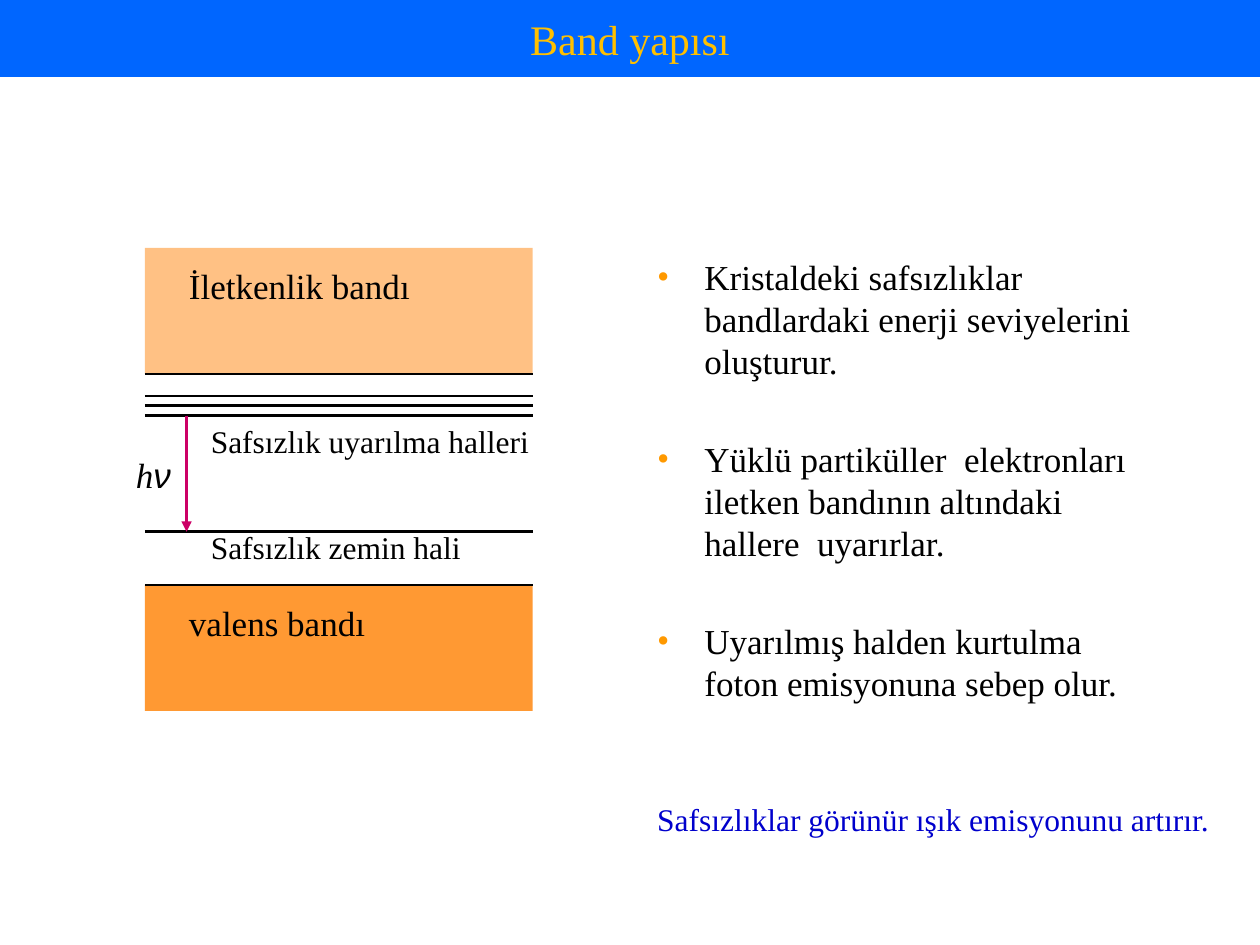
from dataclasses import dataclass

from lxml import etree
from pptx import Presentation
from pptx.dml.color import RGBColor
from pptx.enum.shapes import MSO_CONNECTOR, MSO_SHAPE
from pptx.enum.text import MSO_ANCHOR, PP_ALIGN
from pptx.oxml.ns import qn
from pptx.util import Cm, Pt

RECT = MSO_SHAPE.RECTANGLE
STRAIGHT = MSO_CONNECTOR.STRAIGHT
MIDDLE, TOP = MSO_ANCHOR.MIDDLE, MSO_ANCHOR.TOP
CENTER = PP_ALIGN.CENTER


@dataclass(frozen=True)
class Theme:
    font: str = "Times New Roman"
    symbol_font: str = "Arial"
    header: str = "0066FF"
    title: str = "FFC000"
    ink: str = "000000"
    band: str = "FF9933"
    bullet: str = "FF9900"
    photon: str = "CC0066"
    remark: str = "0000CC"
    title_size: int = 24
    body_size: int = 20
    label_size: int = 18
    line_width: float = 1.5


@dataclass(frozen=True)
class Band:
    top: float
    opacity: int


@dataclass(frozen=True)
class Label:
    text: str
    left: float
    top: float
    width: float
    size: int
    color: str
    wrap: bool = True


T = Theme()

# Band diagram, lengths in centimetres
LEFT, WIDTH, BAND_HEIGHT = 2.92, 7.82, 2.54
CONDUCTION, VALENCE = Band(5.0, 60), Band(11.79, 100)
EXCITED = [7.98, 8.18, 8.38]
GROUND = 10.72
LEVELS = [CONDUCTION.top + BAND_HEIGHT, *EXCITED, GROUND, VALENCE.top]
PHOTON_X = 3.76

LABELS = [
    Label("İletkenlik bandı", 3.56, 5.21, 6.15, T.body_size, T.ink),
    Label("valens bandı", 3.56, 12.0, 6.15, T.body_size, T.ink),
    Label("Safsızlık uyarılma halleri", 4.0, 8.38, 7.19, T.label_size, T.ink),
    Label("Safsızlık zemin hali", 4.0, 10.52, 6.15, T.label_size, T.ink),
    Label("Safsızlıklar görünür ışık emisyonunu artırır.", 13.0, 16.0, 11.73,
          T.label_size, T.remark, wrap=False),
]
POINTS = [
    "Kristaldeki safsızlıklar bandlardaki enerji seviyelerini oluşturur.",
    "Yüklü partiküller  elektronları iletken bandının altındaki hallere  uyarırlar.",
    "Uyarılmış halden kurtulma foton emisyonuna sebep olur.",
]


def set_all(target, values: dict) -> None:
    for name, value in values.items():
        setattr(target, name, value)


def add_run(p, text: str, size: int, color: str, font: str = T.font,
            italic: bool = False) -> None:
    r = p.add_run()
    r.text = text
    set_all(r.font, {"name": font, "size": Pt(size), "bold": False, "italic": italic})
    r.font.color.rgb = RGBColor.from_string(color)


def add_text_frame(s, left: float, top: float, width: float, height: float,
                   wrap: bool = True):
    tf = s.shapes.add_textbox(Cm(left), Cm(top), Cm(width), Cm(height)).text_frame
    set_all(tf, {"word_wrap": wrap, "vertical_anchor": TOP})
    return tf


def add_label(s, label: Label) -> None:
    tf = add_text_frame(s, label.left, label.top, label.width, 1.1, label.wrap)
    add_run(tf.paragraphs[0], label.text, label.size, label.color)


def add_band(s, band: Band) -> None:
    sp = s.shapes.add_shape(RECT, Cm(LEFT), Cm(band.top), Cm(WIDTH), Cm(BAND_HEIGHT))
    sp.shadow.inherit = False
    sp.fill.solid()
    sp.fill.fore_color.rgb = RGBColor.from_string(T.band)
    sp.line.fill.background()
    if band.opacity < 100:
        color = sp._element.spPr.find(qn("a:solidFill"))[0]
        etree.SubElement(color, qn("a:alpha"), val=str(band.opacity * 1000))


def add_line(s, x1: float, y1: float, x2: float, y2: float, color: str,
             arrow: bool = False) -> None:
    line = s.shapes.add_connector(STRAIGHT, Cm(x1), Cm(y1), Cm(x2), Cm(y2))
    line.line.width = Pt(T.line_width)
    line.line.color.rgb = RGBColor.from_string(color)
    if arrow:
        etree.SubElement(line.line._get_or_add_ln(), qn("a:tailEnd"), type="triangle")
    etree.SubElement(line._element.spPr, qn("a:effectLst"))


def add_bullets(s, points: list[str]) -> None:
    tf = add_text_frame(s, 13.0, 5.03, 10.59, 9.4)
    for i, text in enumerate(points):
        p = tf.paragraphs[0] if i == 0 else tf.add_paragraph()
        set_all(p, {"line_spacing": Pt(24), "space_before": Pt(32 if i else 0)})
        pPr = p._p.get_or_add_pPr()
        pPr.set("marL", str(Cm(0.95)))
        pPr.set("indent", str(-Cm(0.95)))
        color = etree.SubElement(pPr, qn("a:buClr"))
        etree.SubElement(color, qn("a:srgbClr"), val=T.bullet)
        etree.SubElement(pPr, qn("a:buFont"), typeface=T.font)
        etree.SubElement(pPr, qn("a:buChar"), char="•")
        add_run(p, text, T.body_size, T.ink)


def add_title(s, text: str) -> None:
    title = s.shapes.title
    set_all(title, {"left": 0, "top": 0, "width": Cm(25.4), "height": Cm(1.55)})
    title.fill.solid()
    title.fill.fore_color.rgb = RGBColor.from_string(T.header)
    tf = title.text_frame
    tf.vertical_anchor = MIDDLE
    p = tf.paragraphs[0]
    p.alignment = CENTER
    add_run(p, text, T.title_size, T.title)


def main() -> None:
    prs = Presentation()
    set_all(prs, {"slide_width": Cm(25.4), "slide_height": Cm(19.05)})
    s = prs.slides.add_slide(prs.slide_layouts[5])
    add_title(s, "Band yapısı")

    # Bands and energy levels
    for band in (CONDUCTION, VALENCE):
        add_band(s, band)
    for y in LEVELS:
        add_line(s, LEFT, y, LEFT + WIDTH, y, T.ink)

    # Photon emission
    add_line(s, PHOTON_X, EXCITED[-1], PHOTON_X, GROUND, T.photon, arrow=True)
    p = add_text_frame(s, 2.49, 9.02, 1.27, 1.1).paragraphs[0]
    add_run(p, "h", T.body_size, T.ink, italic=True)
    add_run(p, "ν", T.body_size, T.ink, T.symbol_font, italic=True)

    # Labels and explanation
    for label in LABELS:
        add_label(s, label)
    add_bullets(s, POINTS)
    prs.save("out.pptx")


if __name__ == "__main__":
    main()
